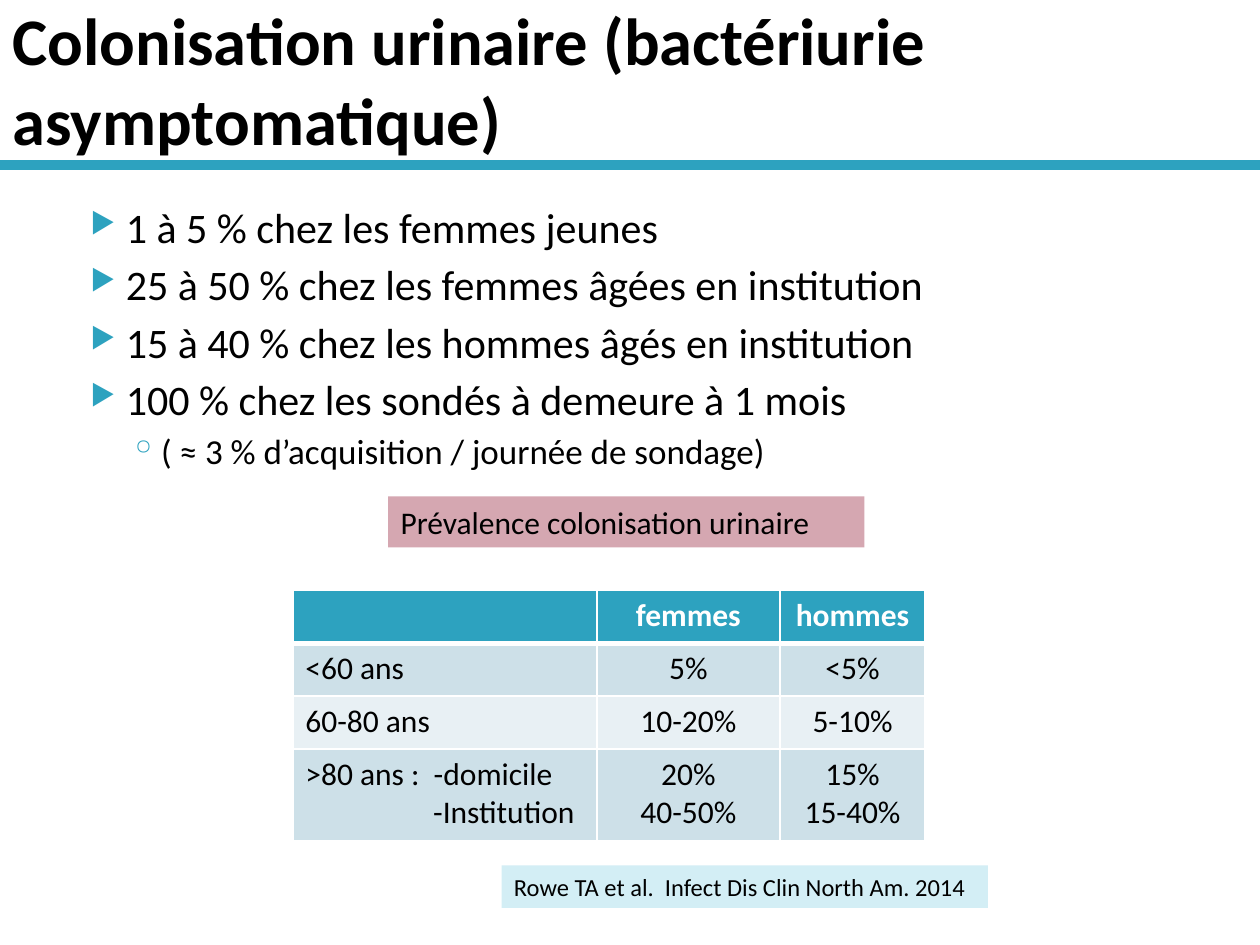
"""Build the slide on urinary colonisation and its prevalence by age and sex."""
from dataclasses import dataclass

from lxml.etree import SubElement
from pptx import Presentation
from pptx.dml.color import RGBColor
from pptx.enum.shapes import MSO_CONNECTOR, MSO_SHAPE
from pptx.enum.text import MSO_ANCHOR, MSO_AUTO_SIZE, PP_ALIGN
from pptx.oxml.ns import qn
from pptx.util import Pt


@dataclass(frozen=True)
class Theme:
    font: str = "Calibri"
    text: str = "000000"
    white: str = "FFFFFF"
    accent: str = "2DA2BF"
    band: str = "CDE0E8"
    light_band: str = "E8F0F4"
    caption: str = "D5A7B1"
    citation: str = "D3EEF5"
    title_size: float = 38
    body_size: float = 24
    sub_size: float = 20
    table_size: float = 18
    citation_size: float = 14


theme = Theme()


def add_run(p, text, size, color=theme.text, bold=False):
    r = p.add_run()
    r.text = text
    r.font.name = theme.font
    r.font.size = Pt(size)
    r.font.bold = bold
    r.font.color.rgb = RGBColor.from_string(color)


def add_border(cell, side, width):
    ln = SubElement(cell._tc.get_or_add_tcPr(), qn(f"a:ln{side}"), w=str(Pt(width)))
    fill = SubElement(ln, qn("a:solidFill"))
    SubElement(fill, qn("a:srgbClr"), val=theme.white)


prs = Presentation()
prs.slide_width, prs.slide_height = Pt(720), Pt(540)
s = prs.slides.add_slide(prs.slide_layouts[5])

rule = s.shapes.add_connector(MSO_CONNECTOR.STRAIGHT, 0, Pt(94.3), Pt(720), Pt(94.3))
rule.line.color.rgb = RGBColor.from_string(theme.accent)
rule.line.width = Pt(6)
SubElement(rule._element.spPr, qn("a:effectLst"))

title = s.shapes.title
title.left, title.top, title.width, title.height = 0, 0, Pt(720), Pt(90)
tf = title.text_frame
tf.word_wrap = True
tf.auto_size = MSO_AUTO_SIZE.NONE
tf.vertical_anchor = MSO_ANCHOR.MIDDLE
p = tf.paragraphs[0]
p.alignment = PP_ALIGN.LEFT
add_run(p, "Colonisation urinaire (bactériurie asymptomatique)", theme.title_size, bold=True)

bullets = [
    (0, "1 à 5 % chez les femmes jeunes"),
    (0, "25 à 50 % chez les femmes âgées en institution"),
    (0, "15 à 40 % chez les hommes âgés en institution"),
    (0, "100 % chez les sondés à demeure à 1 mois"),
    (1, "( ≈ 3 % d’acquisition / journée de sondage)"),
]
levels = [
    (theme.body_size, 28.8, -20.2, 4, "▶", 68),
    (theme.sub_size, 49, -18, 3.2, "◦", 100),
]
body = s.shapes.add_textbox(Pt(36), Pt(111.6), Pt(648), Pt(321.8))
tf = body.text_frame
tf.word_wrap = True
for i, (level, text) in enumerate(bullets):
    size, margin, indent, before, mark, percent = levels[level]
    p = tf.paragraphs[0] if i == 0 else tf.add_paragraph()
    p.level = level
    p.space_before = Pt(before)
    pPr = p._p.get_or_add_pPr()
    pPr.set("marL", str(Pt(margin)))
    pPr.set("indent", str(Pt(indent)))
    color = SubElement(pPr, qn("a:buClr"))
    SubElement(color, qn("a:srgbClr"), val=theme.accent)
    SubElement(pPr, qn("a:buSzPct"), val=str(percent * 1000))
    SubElement(pPr, qn("a:buChar"), char=mark)
    add_run(p, text, size)

rows = [
    ("", "femmes", "hommes"),
    ("<60 ans", "5%", "<5%"),
    ("60-80 ans", "10-20%", "5-10%"),
    (">80 ans :  -domicile\n-Institution", "20%\n40-50%", "15%\n15-40%"),
]
fills = [theme.accent, theme.band, theme.light_band, theme.band]
widths = [173.8, 104.6, 83]
heights = [30.3, 30.3, 30.3, 52.6]
frame = s.shapes.add_table(
    len(rows), len(widths), Pt(167.3), Pt(337.3), Pt(sum(widths)), Pt(sum(heights))
)
table = frame.table
for col, width in zip(table.columns, widths):
    col.width = Pt(width)
for r, texts in enumerate(rows):
    table.rows[r].height = Pt(heights[r])
    header = r == 0
    for c, text in enumerate(texts):
        cell = table.cell(r, c)
        add_border(cell, "L", 1)
        add_border(cell, "R", 1)
        add_border(cell, "T", 3 if r == 1 else 1)
        add_border(cell, "B", 3 if header else 1)
        cell.fill.solid()
        cell.fill.fore_color.rgb = RGBColor.from_string(fills[r])
        tf = cell.text_frame
        for i, line in enumerate(text.split("\n")):
            p = tf.paragraphs[0] if i == 0 else tf.add_paragraph()
            p.alignment = PP_ALIGN.CENTER if c else PP_ALIGN.LEFT
            if i and c == 0:
                p._p.get_or_add_pPr().set("marL", str(Pt(73)))
            if line:
                color = theme.white if header else theme.text
                add_run(p, line, theme.table_size, color, header)

labels = [
    ("Prévalence colonisation urinaire", 221.8, 283.7, 272.2, 29.1,
     theme.caption, theme.table_size),
    ("Rowe TA et al.  Infect Dis Clin North Am. 2014", 286.6, 494.6, 277.9, 24.2,
     theme.citation, theme.citation_size),
]
for text, left, top, width, height, fill, size in labels:
    sp = s.shapes.add_shape(MSO_SHAPE.RECTANGLE, Pt(left), Pt(top), Pt(width), Pt(height))
    sp.shadow.inherit = False
    sp.fill.solid()
    sp.fill.fore_color.rgb = RGBColor.from_string(fill)
    sp.line.fill.background()
    tf = sp.text_frame
    tf.word_wrap = True
    tf.auto_size = MSO_AUTO_SIZE.SHAPE_TO_FIT_TEXT
    p = tf.paragraphs[0]
    p.alignment = PP_ALIGN.LEFT
    add_run(p, text, size)

prs.save("out.pptx")
